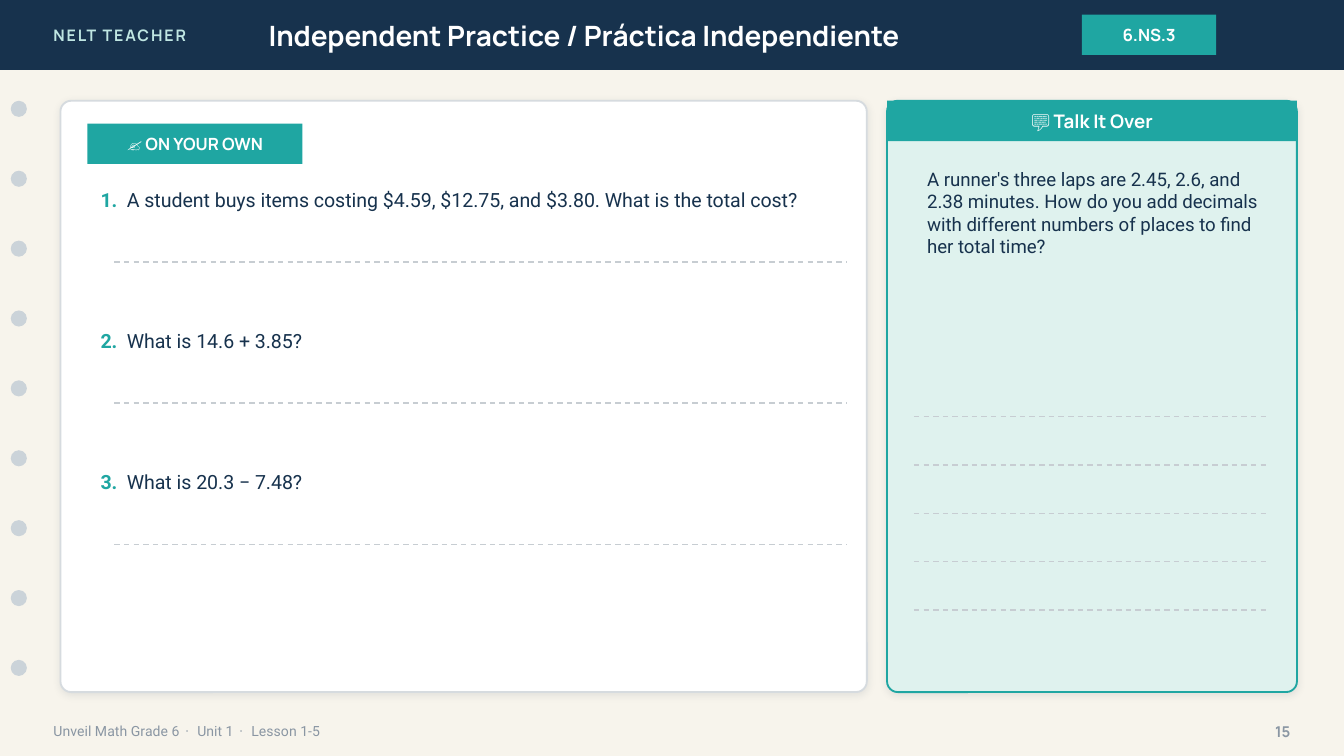
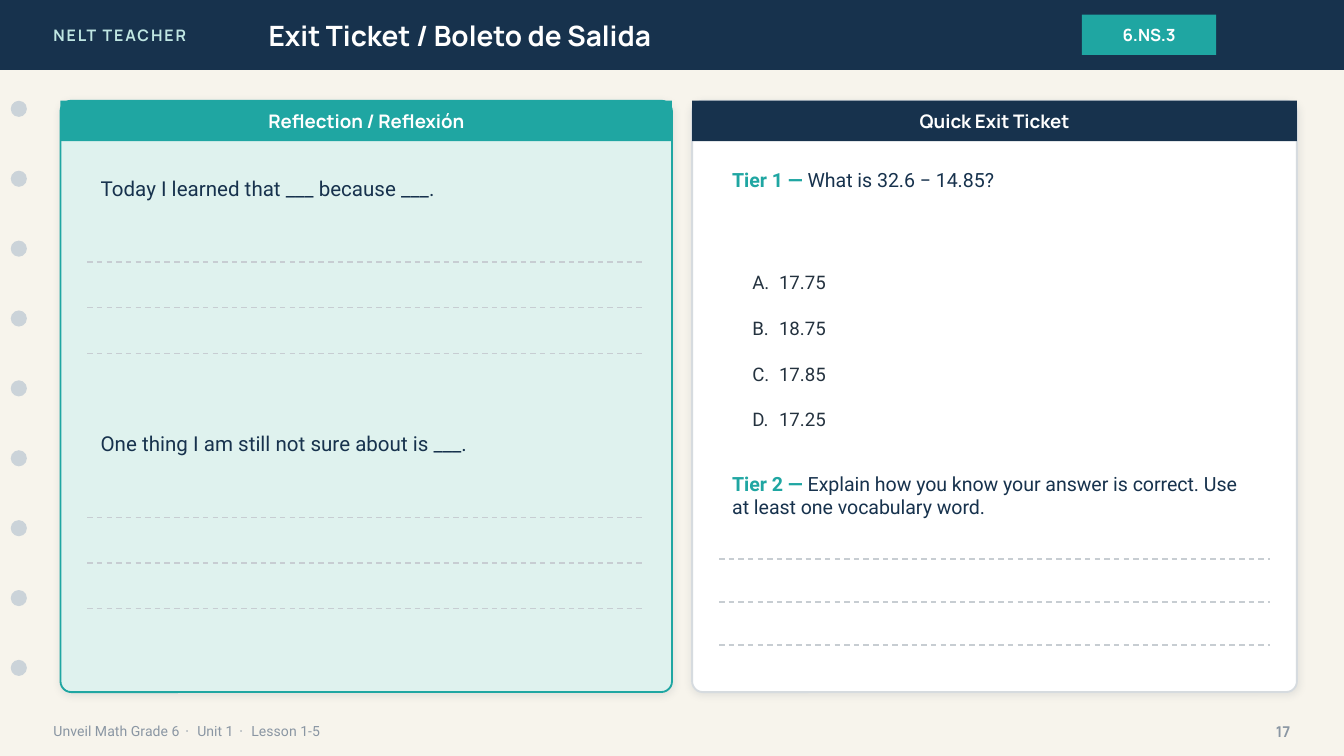
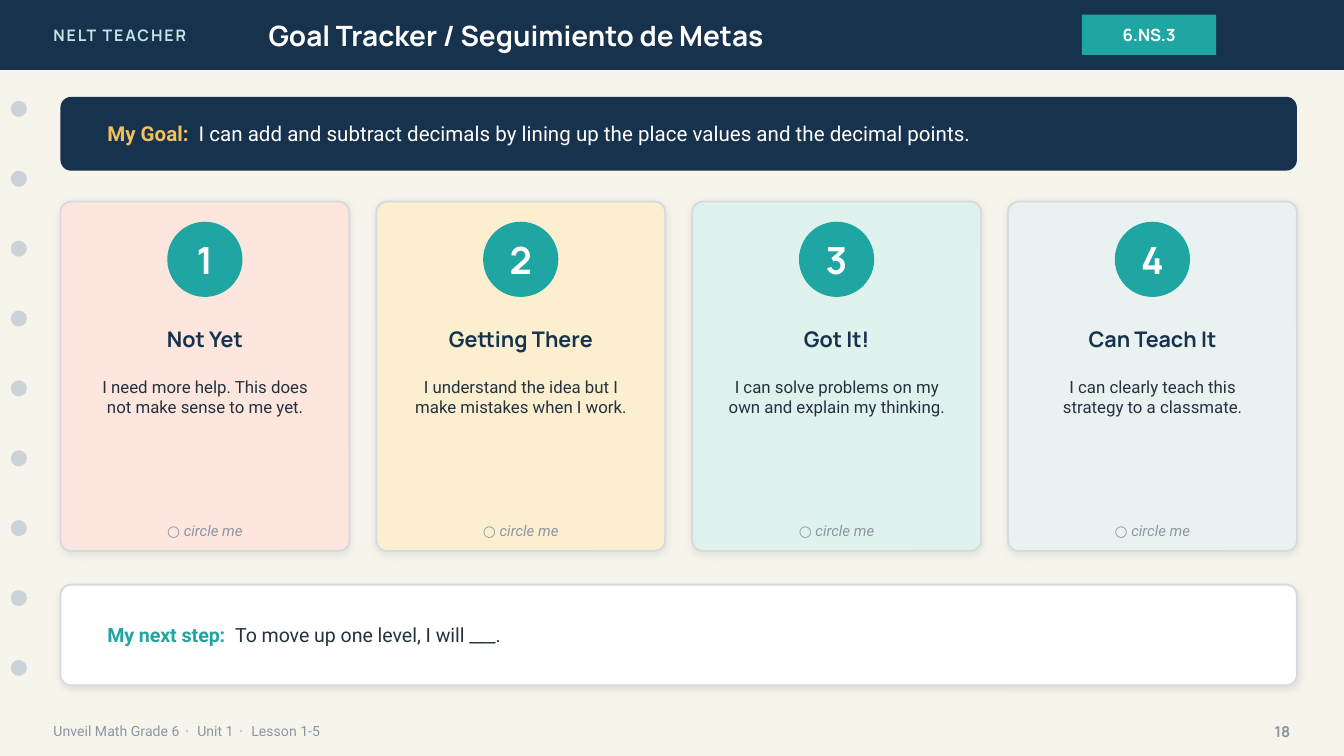
from dataclasses import dataclass

from lxml.etree import SubElement
from pptx import Presentation
from pptx.dml.color import RGBColor
from pptx.enum.dml import MSO_LINE
from pptx.enum.shapes import MSO_CONNECTOR, MSO_SHAPE
from pptx.enum.text import MSO_ANCHOR, PP_ALIGN
from pptx.oxml.ns import qn
from pptx.util import Pt


@dataclass(frozen=True)
class Style:
    font: str
    size: float
    color: str
    bold: bool = False
    italic: bool = False
    spacing: float = 0


class Theme:
    # Colours
    paper, navy, teal, mint = "F7F4EC", "17324D", "1FA6A2", "DFF2EE"
    white, border, rule, hole, shade = "FFFFFF", "D6DBDF", "C7CDD2", "CBD3D9", "1C2E42"
    level_fills = ("FCE6DE", "FBEFD0", mint, "EAF2F1")
    ink, muted = "24323F", "8A96A3"
    # Measures
    radius, pad = 5.76, 14.4
    # Type
    brand = Style("Manrope", 8.5, "BFE6E2", bold=True, spacing=1)
    title = Style("Manrope", 15, white, bold=True)
    tag = Style("Manrope", 9, white, bold=True)
    panel_title = Style("Manrope", 10, white, bold=True)
    footer = Style("Roboto", 7.5, muted)
    footer_dot = Style("Roboto", 7.5, muted, spacing=1.24)
    page_number = Style("Manrope", 8, muted, bold=True)
    question = Style("Roboto", 10.5, navy)
    question_lead = Style("Roboto", 10.5, teal, bold=True)
    talk = Style("Roboto", 10, navy)
    prompt = Style("Roboto", 11, navy)
    choice = Style("Roboto", 10, ink)
    goal = Style("Roboto", 11, white)
    goal_lead = Style("Roboto", 11, "F2C15B", bold=True)
    next_step = Style("Roboto", 10.5, ink)
    level_number = Style("Manrope", 20, white, bold=True)
    level_name = Style("Manrope", 11.5, navy, bold=True)
    level_text = Style("Roboto", 9, ink)
    level_hint = Style("Roboto", 8, muted, italic=True)


@dataclass(frozen=True)
class Box:
    left: float
    top: float
    width: float
    height: float

    def inner(self, dx, dy, width, height):
        return Box(self.left + dx, self.top + dy, width, height)

    def strip(self, dy, height, margin=Theme.pad):
        """Full-width strip with equal side margins."""
        return self.inner(margin, dy, self.width - 2 * margin, height)

    def lengths(self):
        return Pt(self.left), Pt(self.top), Pt(self.width), Pt(self.height)


def rgb(color):
    return RGBColor.from_string(color)


# ---- Building blocks ----

def write(frame, runs, align=PP_ALIGN.LEFT, middle=True, tab=None):
    frame.word_wrap = True
    frame.vertical_anchor = MSO_ANCHOR.MIDDLE if middle else MSO_ANCHOR.TOP
    paragraph = frame.paragraphs[0]
    paragraph.alignment = align
    if tab:
        stops = SubElement(paragraph._p.get_or_add_pPr(), qn("a:tabLst"))
        SubElement(stops, qn("a:tab"), pos=str(Pt(tab)), algn="l")
    for words, style in runs:
        run = paragraph.add_run()
        run.text = words
        font = run.font
        font.name, font.size = style.font, Pt(style.size)
        font.bold, font.italic = style.bold, style.italic
        font.color.rgb = rgb(style.color)
        if style.spacing:
            run._r.get_or_add_rPr().set("spc", str(round(style.spacing * 100)))


def add_text(slide, box, *runs, **layout):
    write(slide.shapes.add_textbox(*box.lengths()).text_frame, runs, **layout)


def add_block(slide, box, fill, kind=MSO_SHAPE.RECTANGLE, label=None, inset=None):
    block = slide.shapes.add_shape(kind, *box.lengths())
    block.shadow.inherit = False
    block.fill.solid()
    block.fill.fore_color.rgb = rgb(fill)
    block.line.fill.background()
    if label:
        frame = block.text_frame
        if inset is not None:
            frame.margin_left = frame.margin_right = Pt(inset)
            frame.margin_top = frame.margin_bottom = Pt(inset)
        write(frame, [label], align=PP_ALIGN.CENTER)
    return block


def add_card(slide, box, fill, border=None):
    """Rounded card; a bordered one also casts a soft shadow."""
    card = add_block(slide, box, fill, MSO_SHAPE.ROUNDED_RECTANGLE)
    card.adjustments[0] = Theme.radius / min(box.width, box.height)
    if border:
        card.line.color.rgb = rgb(border)
        card.line.width = Pt(1)
        effects = card._element.spPr.find(qn("a:effectLst"))
        shadow = SubElement(effects, qn("a:outerShdw"), blurRad=str(Pt(4)),
                            dist=str(Pt(1)), dir="5400000", algn="bl", rotWithShape="0")
        color = SubElement(shadow, qn("a:srgbClr"), val=Theme.shade)
        SubElement(color, qn("a:alpha"), val="10000")


def add_panel(slide, box, heading, head_fill, fill, border):
    add_card(slide, box, fill, border)
    add_block(slide, box.strip(0, 21.6, margin=0), head_fill,
              label=(heading, Theme.panel_title))


def add_answer_lines(slide, box, first, step=0, count=1, indent=Theme.pad, end=Theme.pad):
    for i in range(count):
        y = Pt(box.top + first + i * step)
        answer = slide.shapes.add_connector(
            MSO_CONNECTOR.STRAIGHT, Pt(box.left + indent), y,
            Pt(box.left + box.width - end), y)
        answer.line.color.rgb = rgb(Theme.rule)
        answer.line.width = Pt(0.75)
        answer.line.dash_style = MSO_LINE.DASH
        SubElement(answer._element.spPr, qn("a:effectLst"))


# ---- Shared frame ----

def add_header(slide, box, title):
    add_block(slide, box, Theme.navy)
    add_text(slide, box.inner(21.6, 0, 172.8, box.height), ("NELT TEACHER", Theme.brand))
    add_text(slide, box.inner(136.8, 0, 403.2, box.height), (title, Theme.title))
    add_block(slide, box.inner(579.6, 7.92, 72, 21.6), Theme.teal, label=("6.NS.3", Theme.tag))


def add_binder_holes(slide, box):
    for i in range(9):
        add_block(slide, box.inner(0, i * 37.44, box.width, box.width), Theme.hole, MSO_SHAPE.OVAL)


def add_footer(slide, box, page):
    dot = (" · ", Theme.footer_dot)
    course, unit, lesson = ((words, Theme.footer) for words in
                            ("Unveil Math Grade 6", "Unit 1", "Lesson 1-5"))
    add_text(slide, box.inner(0, 0, 504, box.height), course, dot, unit, dot, lesson)
    add_text(slide, box.inner(box.width - 36, 0, 36, box.height),
             (str(page), Theme.page_number), align=PP_ALIGN.RIGHT)


def new_page(deck, title, page):
    slide = deck.slides.add_slide(deck.slide_layouts[6])
    slide.background.fill.solid()
    slide.background.fill.fore_color.rgb = rgb(Theme.paper)
    add_header(slide, Box(0, 0, 720, 37.44), title)
    add_binder_holes(slide, Box(5.76, 54, 8.64, 308.16))
    add_footer(slide, Box(21.6, 381.6, 676.8, 20.16), page)
    return slide


# ---- Independent practice ----

def add_practice(slide, box, questions):
    add_card(slide, box, Theme.white, Theme.border)
    add_block(slide, box.inner(14.4, 12.24, 115.2, 21.6), Theme.teal,
              label=("✍️ ON YOUR OWN", Theme.tag))
    for i, question in enumerate(questions):
        top = 43.2 + i * 75.6
        add_text(slide, box.inner(14.4, top, 406.8, 36), (f"{i + 1}.\t", Theme.question_lead),
                 (question, Theme.question), middle=False, tab=14.1)
        add_answer_lines(slide, box, top + 43.2, indent=28.8, end=10.8)


def add_talk(slide, box, question):
    add_panel(slide, box, "💬 Talk It Over", Theme.teal, Theme.mint, Theme.teal)
    add_text(slide, box.inner(14.4, 32.4, 194.4, 122.4), (question, Theme.talk), middle=False)
    add_answer_lines(slide, box, 169.2, 25.92, 5)


# ---- Exit ticket ----

def add_reflection(slide, box, prompts):
    add_panel(slide, box, "Reflection / Reflexión", Theme.teal, Theme.mint, Theme.teal)
    for top, prompt in zip((32.4, 169.2), prompts):
        add_text(slide, box.strip(top, 28.8), (prompt, Theme.prompt))
        add_answer_lines(slide, box, top + 54, 24.48, 3)


def add_exit_ticket(slide, box, question, choices, follow_up):
    add_panel(slide, box, "Quick Exit Ticket", Theme.navy, Theme.white, Theme.border)
    tiers = ((32.4, 50.4, question), (195.12, 39.6, follow_up))
    for number, (top, height, task) in enumerate(tiers, 1):
        add_text(slide, box.strip(top, height), (f"Tier {number} — ", Theme.question_lead),
                 (task, Theme.question), middle=False)
    for i, (letter, value) in enumerate(zip("ABCD", choices)):
        add_text(slide, box.inner(25.2, 86.4 + i * 24.48, 280.8, 21.6),
                 (f"{letter}.\t{value}", Theme.choice), tab=14.3)
    add_answer_lines(slide, box, 245.52, 23.04, 3)


# ---- Goal tracker ----

def add_statement(slide, box, lead, words, tab, fill, border=None):
    add_card(slide, box, fill, border)
    lead_words, lead_style = lead
    add_text(slide, box.strip(0, box.height, margin=18),
             (lead_words + "\t", lead_style), words, tab=tab)


def add_level(slide, box, number, fill, name, meaning):
    add_card(slide, box, fill, Theme.border)
    disc = 40.32
    add_block(slide, box.inner((box.width - disc) / 2, 10.8, disc, disc), Theme.teal,
              MSO_SHAPE.OVAL, label=(str(number), Theme.level_number), inset=0)
    center = PP_ALIGN.CENTER
    add_text(slide, box.strip(61.2, 25.2, 3.6), (name, Theme.level_name), align=center)
    add_text(slide, box.strip(90, 82.8, 8.64), (meaning, Theme.level_text),
             align=center, middle=False)
    add_text(slide, box.strip(169.2, 14.4, 3.6), ("○ circle me", Theme.level_hint), align=center)


def add_levels(slide, box, levels, gap=14.4):
    width = (box.width - gap * (len(levels) - 1)) / len(levels)
    for i, (fill, (name, meaning)) in enumerate(zip(Theme.level_fills, levels)):
        add_level(slide, box.inner(i * (width + gap), 0, width, box.height),
                  i + 1, fill, name, meaning)


# ---- Slides ----

def practice_slide(deck):
    slide = new_page(deck, "Independent Practice / Práctica Independiente", 15)
    add_practice(slide, Box(32.4, 54, 432, 316.8), (
        "A student buys items costing $4.59, $12.75, and $3.80. What is the total cost?",
        "What is 14.6 + 3.85?",
        "What is 20.3 − 7.48?"))
    add_talk(slide, Box(475.2, 54, 219.6, 316.8),
             "A runner's three laps are 2.45, 2.6, and 2.38 minutes. How do you add decimals "
             "with different numbers of places to find her total time?")


def exit_slide(deck):
    slide = new_page(deck, "Exit Ticket / Boleto de Salida", 17)
    add_reflection(slide, Box(32.4, 54, 327.6, 316.8), (
        "Today I learned that ___ because ___.",
        "One thing I am still not sure about is ___."))
    add_exit_ticket(slide, Box(370.8, 54, 324, 316.8),
                    "What is 32.6 − 14.85?", ("17.75", "18.75", "17.85", "17.25"),
                    "Explain how you know your answer is correct. "
                    "Use at least one vocabulary word.")


def goal_slide(deck):
    slide = new_page(deck, "Goal Tracker / Seguimiento de Metas", 18)
    add_statement(slide, Box(32.4, 51.84, 662.4, 39.6), ("My Goal:", Theme.goal_lead),
                  ("I can add and subtract decimals by lining up the place values "
                   "and the decimal points.", Theme.goal), 49, Theme.navy)
    add_levels(slide, Box(32.4, 108, 662.4, 187.2), (
        ("Not Yet", "I need more help. This does not make sense to me yet."),
        ("Getting There", "I understand the idea but I make mistakes when I work."),
        ("Got It!", "I can solve problems on my own and explain my thinking."),
        ("Can Teach It", "I can clearly teach this strategy to a classmate.")))
    add_statement(slide, Box(32.4, 313.2, 662.4, 54), ("My next step:", Theme.question_lead),
                  ("To move up one level, I will ___.", Theme.next_step),
                  68.5, Theme.white, Theme.border)


def main():
    deck = Presentation()
    deck.slide_width, deck.slide_height = Pt(720), Pt(405)
    practice_slide(deck)
    exit_slide(deck)
    goal_slide(deck)
    deck.save("out.pptx")


if __name__ == "__main__":
    main()
